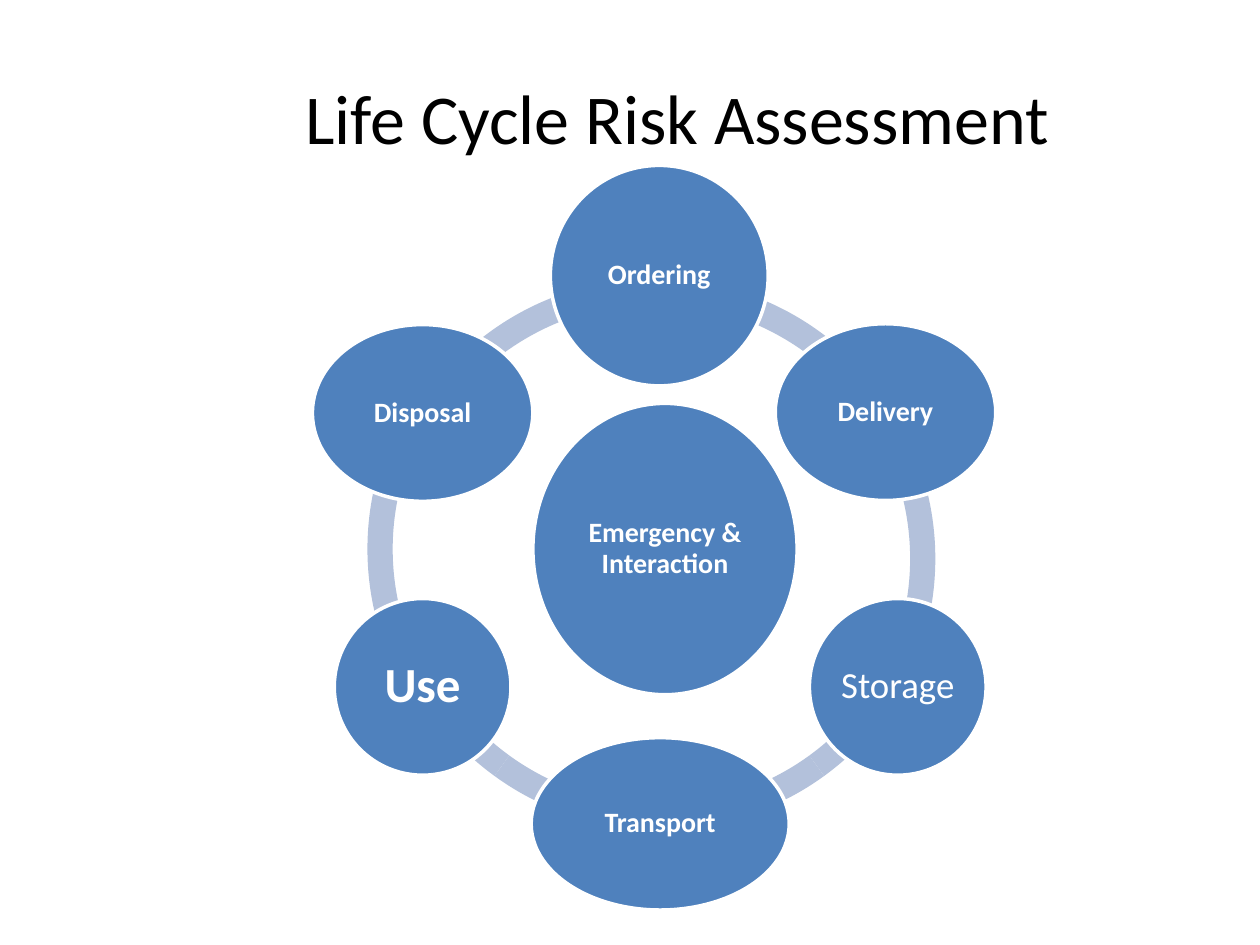
from dataclasses import dataclass

from pptx import Presentation
from pptx.dml.color import RGBColor
from pptx.enum.shapes import MSO_SHAPE
from pptx.enum.text import MSO_ANCHOR, PP_ALIGN
from pptx.shapes.autoshape import Shape
from pptx.shapes.group import GroupShape
from pptx.util import Pt

ELLIPSE = MSO_SHAPE.OVAL
BLOCK_ARC = MSO_SHAPE.BLOCK_ARC
MIDDLE = MSO_ANCHOR.MIDDLE
CENTER = PP_ALIGN.CENTER

FONT = "Calibri"
BLACK, WHITE, BLUE, PALE_BLUE = "000000", "FFFFFF", "4F81BD", "B3C1DB"
RING_SIZE = 320.5
RING_THICKNESS = 0.045  # share of the ring size
DEGREE = 0.6  # one degree in adjustment units


@dataclass
class Arc:
    start: float
    end: float
    left: float = 216.5
    top: float = 153.5


@dataclass
class Stage:
    label: str
    left: float
    top: float
    width: float
    height: float
    font_size: float = 16
    bold: bool = True
    inset: float = 1.5


ARCS = [
    *(Arc(start, start + 36) for start in (126, 90, 54, 18)),
    Arc(196.53, 16.61, left=214, top=159),
    Arc(163.43, 197.99, left=210),
]

STAGES = [
    Stage("Emergency & Interaction", 304.5, 230.5, 151, 166.5),
    Stage("Ordering", 314.5, 94.5, 124.5, 126),
    Stage("Delivery", 443, 185, 126, 101),
    Stage("Storage", 462.5, 342, 101, 101, font_size=21, bold=False, inset=2),
    Stage("Transport", 303.5, 421.5, 147.5, 98.5),
    Stage("Use", 191, 342, 101, 101, font_size=28, inset=3),
    Stage("Disposal", 178.5, 185.5, 126, 101),
]


def color(value: str) -> RGBColor:
    return RGBColor.from_string(value)


def format_text(shape: Shape, size: float, text_color: str, bold: bool) -> None:
    shape.text_frame.vertical_anchor = MIDDLE
    for paragraph in shape.text_frame.paragraphs:
        paragraph.alignment = CENTER
        for run in paragraph.runs:
            run.font.name = FONT
            run.font.size = Pt(size)
            run.font.bold = bold
            run.font.color.rgb = color(text_color)


def draw_arc(group: GroupShape, arc: Arc) -> None:
    shape = group.shapes.add_shape(
        BLOCK_ARC, Pt(arc.left), Pt(arc.top), Pt(RING_SIZE), Pt(RING_SIZE))
    shape.adjustments[0] = arc.start * DEGREE
    shape.adjustments[1] = arc.end * DEGREE
    shape.adjustments[2] = RING_THICKNESS
    shape.shadow.inherit = False
    shape.fill.solid()
    shape.fill.fore_color.rgb = color(PALE_BLUE)
    shape.line.fill.background()


def draw_stage(group: GroupShape, stage: Stage) -> None:
    shape = group.shapes.add_shape(
        ELLIPSE, Pt(stage.left), Pt(stage.top), Pt(stage.width), Pt(stage.height))
    shape.shadow.inherit = False
    shape.fill.solid()
    shape.fill.fore_color.rgb = color(BLUE)
    shape.line.color.rgb = color(WHITE)
    shape.line.width = Pt(2)
    text_frame = shape.text_frame
    text_frame.text = stage.label
    text_frame.word_wrap = True
    text_frame.margin_left = text_frame.margin_right = Pt(stage.inset)
    text_frame.margin_top = text_frame.margin_bottom = Pt(stage.inset)
    text_frame.paragraphs[0].line_spacing = 0.9
    format_text(shape, stage.font_size, WHITE, stage.bold)


def main() -> None:
    presentation = Presentation()
    presentation.slide_width, presentation.slide_height = Pt(720), Pt(540)
    slide = presentation.slides.add_slide(presentation.slide_layouts[5])

    # Title
    title = slide.shapes.title
    title.left, title.top, title.width, title.height = Pt(54), Pt(21), Pt(666), Pt(91.5)
    title.text_frame.text = "Life Cycle Risk Assessment"
    format_text(title, 40, BLACK, bold=False)

    # Ring behind the stages, then the stages themselves
    cycle = slide.shapes.add_group_shape()
    for arc in ARCS:
        draw_arc(cycle, arc)
    for stage in STAGES:
        draw_stage(cycle, stage)

    presentation.save("out.pptx")


if __name__ == "__main__":
    main()
